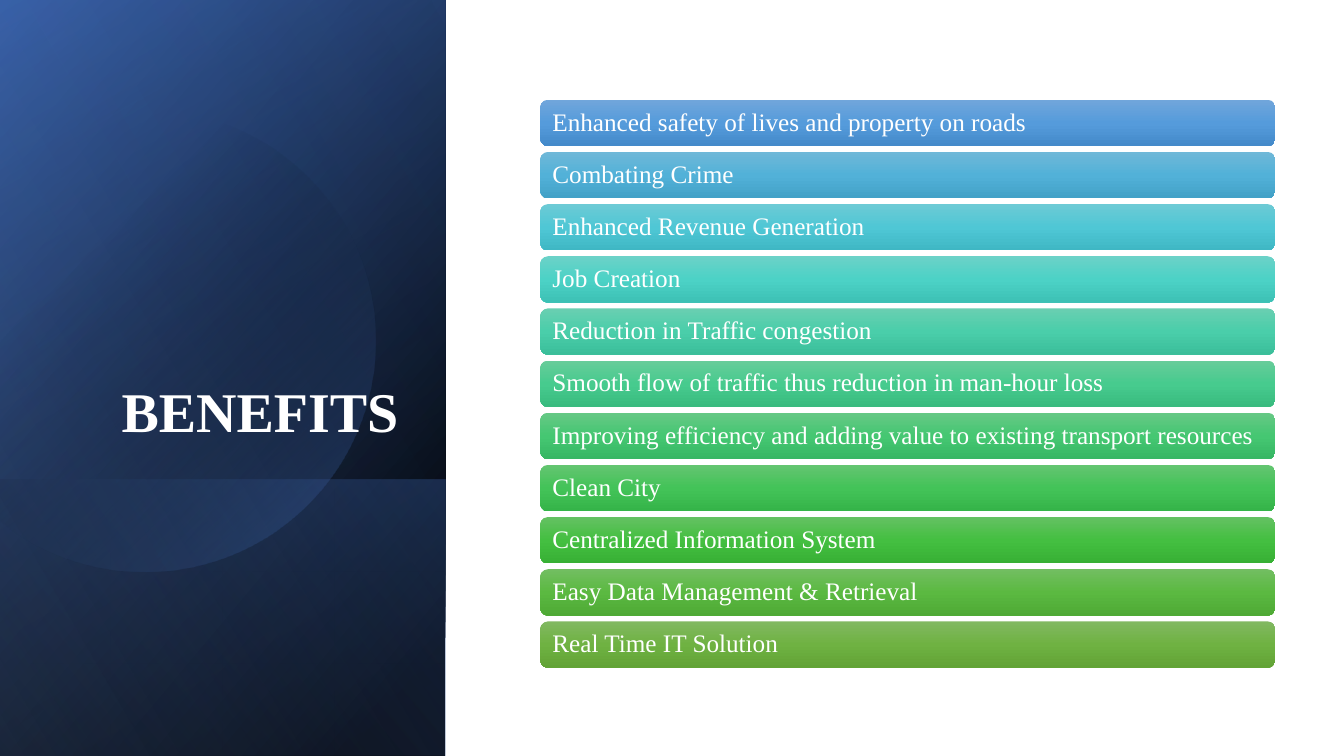
from math import cos, radians, sin

from pptx import Presentation
from pptx.dml.color import RGBColor
from pptx.enum.shapes import MSO_SHAPE
from pptx.enum.text import MSO_ANCHOR, PP_ALIGN
from pptx.oxml import parse_xml
from pptx.oxml.ns import nsdecls
from pptx.util import Inches, Pt

RECT, ROUND = MSO_SHAPE.RECTANGLE, MSO_SHAPE.ROUNDED_RECTANGLE
MIDDLE, BOTTOM = MSO_ANCHOR.MIDDLE, MSO_ANCHOR.BOTTOM
LEFT, RIGHT = PP_ALIGN.LEFT, PP_ALIGN.RIGHT

COLS, ROWS = 40, 30
COLORS = {
    "white": "FFFFFF", "black": "000000", "navy": "2F5597",
    "blue": "4472C4", "pale": "8FAADC",
}
BENEFITS = [
    ("Enhanced safety of lives and property on roads", "71A6DB", "559BDB", "448ACA"),
    ("Combating Crime", "6FB8D8", "52B1D8", "42A1C7"),
    ("Enhanced Revenue Generation", "6DCAD5", "4FC7D5", "3FB7C4"),
    ("Job Creation", "6BD2C8", "4CD2C6", "3DC1B5"),
    ("Reduction in Traffic congestion", "69CFB1", "4ACEAA", "3BBE9A"),
    ("Smooth flow of traffic thus reduction in man-hour loss", "67CC9A", "47CB8E", "39BB7F"),
    ("Improving efficiency and adding value to existing transport resources",
     "66C885", "45C772", "37B764"),
    ("Clean City", "64C571", "43C358", "35B449"),
    ("Centralized Information System", "64C162", "44BF41", "37B034"),
    ("Easy Data Management & Retrieval", "72BE61", "5BB941", "4EA935"),
    ("Real Time IT Solution", "81B861", "6FB242", "62A336"),
]


class Deck:
    def __init__(self):
        self.prs = Presentation()
        self.prs.slide_width, self.prs.slide_height = Inches(13.33), Inches(7.5)
        self.col = self.prs.slide_width / COLS
        self.row = self.prs.slide_height / ROWS
        self.font = "Times New Roman"
        self.shapes = self.prs.slides.add_slide(self.prs.slide_layouts[6]).shapes

    def box(self, x, y, w, h):
        """Turn grid columns and rows into slide lengths."""
        return [round(v) for v in (x * self.col, y * self.row, w * self.col, h * self.row)]

    def shade(self, shape, stops, angle):
        """Fill with (place, colour, opacity) stops, all in percent."""
        shape.line.fill.background()
        shape.shadow.inherit = False
        marks = "".join(
            f'<a:gs pos="{place * 1000}"><a:srgbClr val="{COLORS.get(color, color)}">'
            f'<a:alpha val="{alpha * 1000}"/></a:srgbClr></a:gs>'
            for place, color, alpha in stops)
        fill = parse_xml(
            f'<a:gradFill {nsdecls("a")} rotWithShape="1"><a:gsLst>{marks}</a:gsLst>'
            f'<a:lin ang="{angle * 60000}" scaled="0"/></a:gradFill>')
        shape._element.spPr.insert(2, fill)

    def panel(self, x, y, w, h, stops, angle):
        """Add a mirrored rectangle turned a quarter, given by its visible box."""
        x, y, w, h = self.box(x, y, w, h)
        shape = self.shapes.add_shape(
            RECT, x + (w - h) // 2, y + (h - w) // 2, h, w)
        shape.rotation = 90
        shape._element.spPr.xfrm.set("flipH", "1")
        self.shade(shape, stops, angle)

    def disc(self, x, y, radius, cut, stops, angle):
        """Add a circle cut off on its left, from -cut to +cut degrees."""
        x, y, radius, _ = self.box(x, y, radius, 0)
        steps = 120
        turns = [radians(cut * (2 * i / steps - 1)) for i in range(steps + 1)]
        points = [(round(x + radius * cos(t)), round(y + radius * sin(t))) for t in turns]
        curve = self.shapes.build_freeform(*points[0])
        curve.add_line_segments(points[1:], close=True)
        self.shade(curve.convert_to_shape(), stops, angle)

    def label(self, shape, text, size, align, anchor, bold=False):
        frame = shape.text_frame
        frame.text, frame.word_wrap = text, True
        frame.vertical_anchor = anchor
        para = frame.paragraphs[0]
        para.alignment, para.line_spacing = align, 0.9
        font = para.runs[0].font
        font.name, font.size, font.bold = self.font, Pt(size), bold
        font.color.rgb = RGBColor.from_string(COLORS["white"])

    def title(self, x, y, w, h, text):
        shape = self.shapes.add_textbox(*self.box(x, y, w, h))
        self.label(shape, text, 40, RIGHT, BOTTOM, bold=True)

    def bar(self, x, y, w, h, text, tints):
        shape = self.shapes.add_shape(ROUND, *self.box(x, y, w, h))
        self.shade(shape, [(50 * i, tint, 100) for i, tint in enumerate(tints)], 90)
        self.label(shape, text, 18, LEFT, MIDDLE)


def main():
    deck = Deck()
    side = (0, 0, 13.26, ROWS)
    deck.panel(*side, [(8, "black", 100), (100, "navy", 100)], 50)
    deck.panel(*side, [(0, "black", 0), (99, "blue", 46)], 30)
    deck.panel(0, 19.04, 13.26, 10.96, [(2, "blue", 29), (100, "black", 30)], 130)
    deck.disc(4.32, 13.52, 6.87, 134, [(29, "black", 0), (100, "blue", 43)], 46)
    deck.panel(*side, [(0, "black", 0), (99, "pale", 11)], 120)
    deck.title(1.92, 7.36, 10.23, 10.48, "BENEFITS")
    for i, (text, *tints) in enumerate(BENEFITS):
        deck.bar(16.08, 3.96 + 2.07 * i, 21.88, 1.84, text, tints)
    deck.prs.save("out.pptx")


if __name__ == "__main__":
    main()
